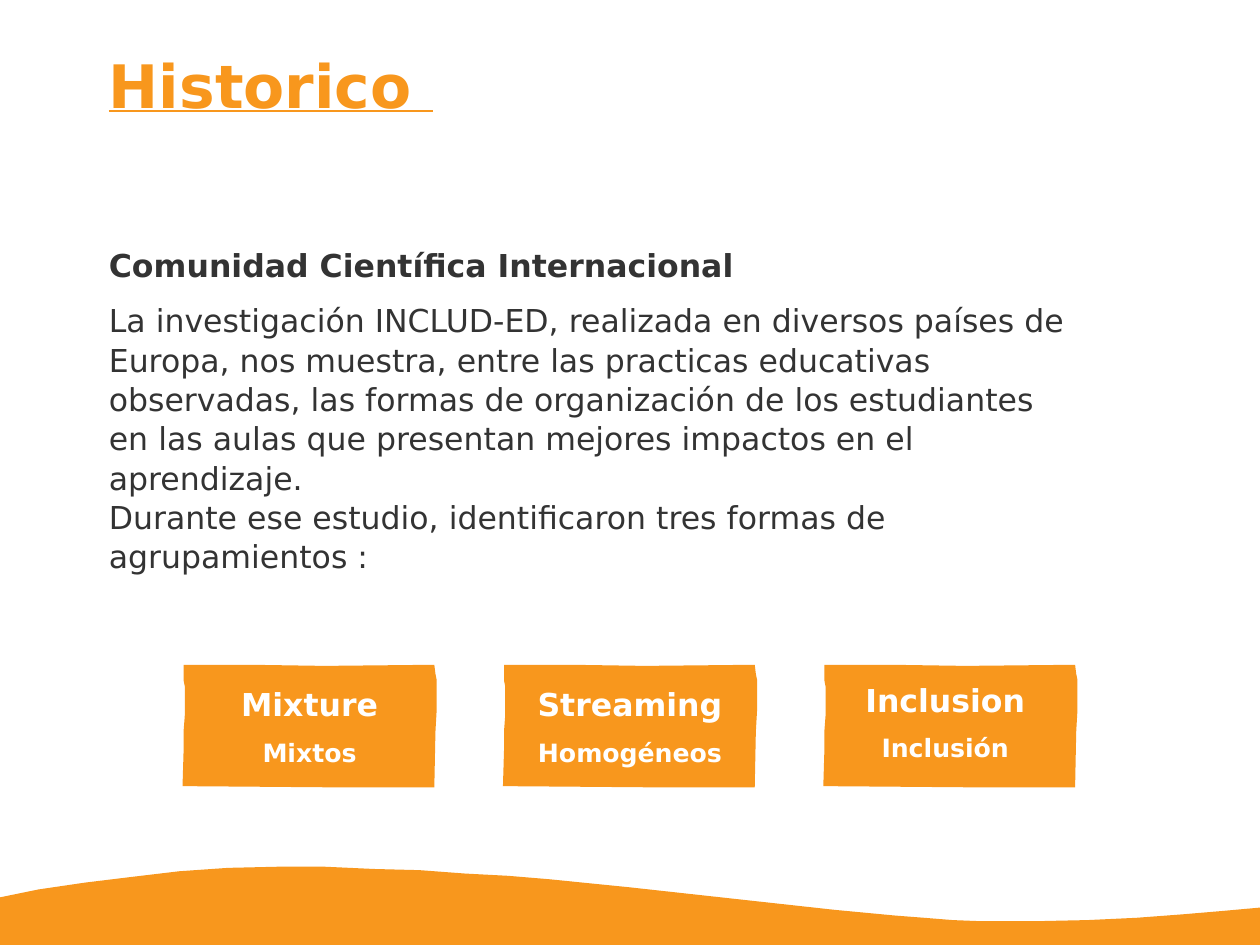
from lxml.etree import SubElement
from pptx import Presentation
from pptx.dml.color import RGBColor
from pptx.enum.text import MSO_ANCHOR, MSO_AUTO_SIZE, PP_ALIGN
from pptx.oxml.ns import qn
from pptx.util import Inches, Pt

ORANGE, GREY, WHITE = "F8971D", "333333", "FFFFFF"

WAVE = [(0, 7.91), (0.34, 7.84), (0.75, 7.78), (1.16, 7.73), (1.58, 7.68),
        (2.01, 7.65), (2.44, 7.64), (2.87, 7.64), (3.3, 7.66), (3.7, 7.67),
        (4.1, 7.7), (4.48, 7.72), (4.84, 7.75), (5.54, 7.82), (7.36, 8.02),
        (7.89, 8.07), (8.15, 8.09), (8.4, 8.11), (8.65, 8.12), (8.89, 8.12),
        (9.13, 8.12), (9.59, 8.11), (10.02, 8.09), (10.42, 8.06),
        (10.78, 8.03), (11.11, 8), (11.11, 8.33), (0, 8.33)]
CARD = [(0.01, 0), (0.6, 0), (1.25, 0.01), (2.22, 0), (2.23, 0.08),
        (2.24, 0.13), (2.24, 0.22), (2.24, 0.41), (2.23, 0.59), (2.22, 1.08),
        (1.28, 1.08), (0, 1.07), (0.01, 0.74), (0.01, 0.58), (0.02, 0.45),
        (0.02, 0.19), (0.01, 0.14)]
CARD_LEFT, CARD_TOP, CARD_STEP = 1.61, 5.86, 2.825
LABEL_WIDTH = 1.73

GROUPS = [("Mixture", "Mixtos", 2.73, 6.04),
          ("Streaming", "Homogéneos", 5.555, 6.04),
          ("Inclusion", "Inclusión", 8.335, 6)]


def color(value):
    return RGBColor.from_string(value)


class SlideBuilder:
    font = "DejaVu Sans"

    def __init__(self, page):
        self.page = page

    def outline(self, points, left=0, top=0):
        corners = [(Inches(left + x), Inches(top + y)) for x, y in points]
        builder = self.page.shapes.build_freeform(*corners[0], scale=1)
        builder.add_line_segments(corners[1:], close=True)
        shape = builder.convert_to_shape()
        shape.shadow.inherit = False
        shape.fill.solid()
        shape.fill.fore_color.rgb = color(ORANGE)
        shape.line.fill.background()

    def place(self, box, left, top, width, height):
        box.left, box.top = Inches(left), Inches(top)
        box.width, box.height = Inches(width), Inches(height)
        frame = box.text_frame
        frame.margin_left = frame.margin_right = 0
        frame.margin_top = frame.margin_bottom = 0
        frame.word_wrap = True
        frame.auto_size = MSO_AUTO_SIZE.NONE
        frame.vertical_anchor = MSO_ANCHOR.TOP
        return frame

    def style(self, para, size, hue, bold=False, align=PP_ALIGN.LEFT,
              before=0, spacing=1.0, underline=False):
        para.alignment = align
        para.space_before = Pt(before)
        para.line_spacing = spacing
        for span in para.runs:
            span.font.name = self.font
            span.font.size = Pt(size)
            span.font.bold = bold
            span.font.underline = underline
            span.font.color.rgb = color(hue)

    def title(self, text):
        frame = self.place(self.page.shapes.title, 0.96, 0.43, 9.19, 0.63)
        frame.text = text
        self.style(frame.paragraphs[0], 38, ORANGE, bold=True,
                   spacing=Pt(45.5), underline=True)

    def body(self, heading, *texts):
        frame = self.place(self.page.placeholders[1], 0.96, 2.17, 8.5, 3.25)
        frame.text = "\n".join((heading, *texts))
        for index, para in enumerate(frame.paragraphs):
            properties = para._p.get_or_add_pPr()
            properties.set("marL", "0")
            properties.set("indent", "0")
            SubElement(properties, qn("a:buNone"))
            self.style(para, 20, GREY, bold=index == 0,
                       before=10 if index == 1 else 0,
                       spacing=1.04 if index else 1.0)

    def label(self, name, translation, center, top):
        box = self.page.shapes.add_textbox(0, 0, 0, 0)
        frame = self.place(box, center - LABEL_WIDTH / 2, top, LABEL_WIDTH, 0.73)
        frame.text = f"{name}\n{translation}"
        first, second = frame.paragraphs
        self.style(first, 20, WHITE, bold=True, align=PP_ALIGN.CENTER)
        self.style(second, 16, WHITE, bold=True, align=PP_ALIGN.CENTER, before=9)


def main():
    deck = Presentation()
    deck.slide_width, deck.slide_height = Inches(11.11), Inches(8.33)
    slide = SlideBuilder(deck.slides.add_slide(deck.slide_layouts[1]))
    slide.outline(WAVE)
    slide.title("Historico ")
    slide.body(
        "Comunidad Científica Internacional",
        "La investigación INCLUD-ED, realizada en diversos países de Europa, "
        "nos muestra, entre las practicas educativas observadas, las formas de "
        "organización de los estudiantes en las aulas que presentan mejores "
        "impactos en el aprendizaje.",
        "Durante ese estudio, identificaron tres formas de agrupamientos :")
    for index, group in enumerate(GROUPS):
        slide.outline(CARD, CARD_LEFT + index * CARD_STEP, CARD_TOP)
        slide.label(*group)
    deck.save("out.pptx")


if __name__ == "__main__":
    main()
